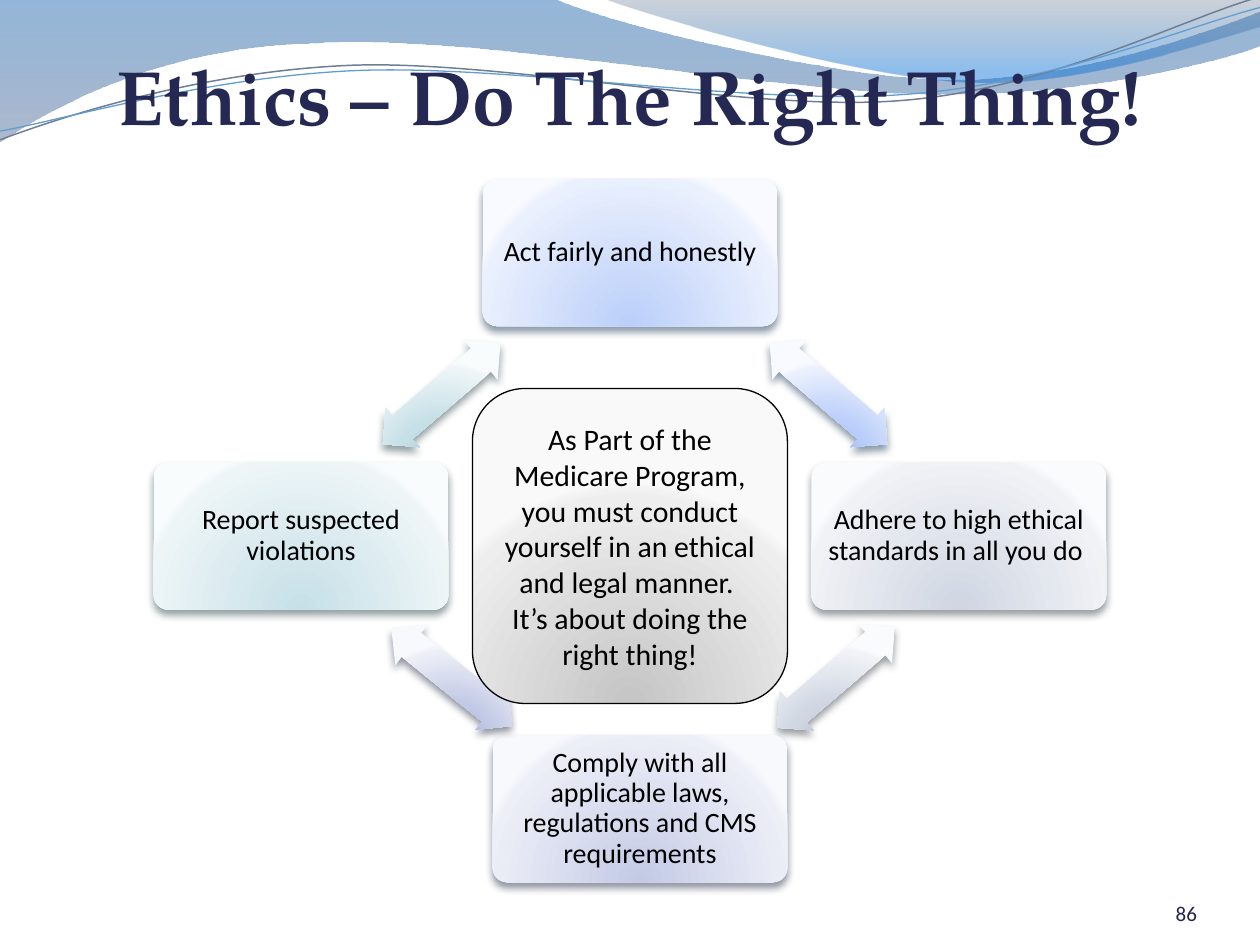
from lxml.etree import SubElement
from pptx import Presentation
from pptx.dml.color import RGBColor as RGB
from pptx.enum.shapes import MSO_SHAPE as Kind
from pptx.enum.text import MSO_ANCHOR as Anchor, MSO_AUTO_SIZE as Fit, PP_ALIGN as Align
from pptx.oxml.ns import qn
from pptx.util import Pt

THEME = {
    "head": "TeX Gyre Pagella", "body": "Calibri",
    "ink": "000000", "navy": "242852", "page": "22264E",
    "title": 44, "core": 17, "box": 16, "num": 12,
    # tones run from deep to pale, then the shadow colour
    "blue": ("8EAFEE", "BBCFFA", "EAF0FD", "F8FAFF", "0D2D4C"),
    "slate": ("AFB9CB", "D0D6E2", "F0F2F6", "FAFBFC", "2C323C"),
    "violet": ("99A5D0", "C3CAE6", "EDEFF7", "F8F9FD", "19233D"),
    "teal": ("9FC8D1", "C6E0E7", "EDF5F7", "F9FCFD", "1F393E"),
    "gray": ("C6C6C6", "EEEEEE", "F9F9F9"),
}

TITLE = "Ethics – Do The Right Thing!"
CORE = ["As Part of the Medicare Program, you must conduct yourself in an "
        "ethical and legal manner. ", "It’s about doing the right thing!"]
PAGE = "86"

# text, tone, box left and top, then centre and turn of the arrow that follows
STEPS = [
    ("Act fairly and honestly", "blue", (275.8, 102.2), (473.4, 225), 40.7),
    ("Adhere to high ethical standards in all you do ", "slate",
     (463.7, 264.2), (477.7, 387), 139.4),
    ("Comply with all applicable laws, regulations and CMS requirements",
     "violet", (281.5, 420), (258.1, 387), 218.9),
    ("Report suspected violations", "teal", (87.8, 264.2), (252.4, 225), 319.3),
]
BOX = (168.5, 84.2)
ARROW = (88.6, 29.5)

# start, then legs: two numbers make a line, six make a curve
BANDS = [
    ([(0, 0), (316.8, -0.7), (342.7, 12.2, 478.1, 45.4, 545.8, 45.4),
      (614.2, 45.4, 689.8, 18.7, 720, 6.5), (720.7, 25.9),
      (707.8, 31.7, 626.4, 54.7, 537.1, 54),
      (447.8, 54, 275, 20.2, 185, 24.5), (92.9, 25.9, 33.1, 59.8, -0.7, 81.4)],
     [(0, "125EAA", 45), (100, "697FA4", 55)]),
    ([(344.9, -0.7), (366.5, 7.9, 491, 44.6, 553.7, 46.8),
      (616.3, 49.7, 691.9, 23, 720, 15.1), (720, 0)],
     [(0, "596982", 30), (80, "0670DA", 45)]),
]
STRANDS = [
    ([(0, 79.9), (34.6, 67, 113.8, 41, 199.4, 37.4),
      (284.4, 33.8, 427, 64.1, 513.4, 57.6),
      (599.8, 51.1, 675.4, 10.8, 718.6, -1.4)], "707E95", 0.85),
    ([(0, 74.9), (33.8, 69.1, 118.1, 43.9, 203.8, 40.3),
      (290.2, 36.7, 429.8, 60.5, 516.2, 54),
      (601.9, 48.2, 677.5, 15.1, 720, 4.3)], "629DD1", 0.75),
]


def tint(host, color, alpha):
    node = SubElement(host, qn("a:srgbClr"), val=color)
    if alpha < 100:
        SubElement(node, qn("a:alpha"), val=str(alpha * 1000))


def shade(shape, stops, glow=True):
    """Fill with a glow from below, or else with a fade from top to bottom."""
    shape.fill.gradient()
    grad = shape._element.spPr.find(qn("a:gradFill"))
    for node in list(grad):
        grad.remove(node)
    grad.set("rotWithShape", "1")
    group = SubElement(grad, qn("a:gsLst"))
    for pos, color, alpha in stops:
        tint(SubElement(group, qn("a:gs"), pos=str(pos * 1000)), color, alpha)
    if glow:
        way = SubElement(grad, qn("a:path"), path="circle")
        SubElement(way, qn("a:fillToRect"), l="50000", t="130000",
                   r="50000", b="-30000")
    else:
        SubElement(grad, qn("a:lin"), ang="5400000", scaled="1")


def drop(shape, color):
    """Cast a soft shadow straight down."""
    fx = shape._element.spPr.find(qn("a:effectLst"))
    cast = SubElement(fx, qn("a:outerShdw"), blurRad=str(Pt(4.5)),
                      dist=str(Pt(3)), dir="5400000", rotWithShape="0")
    tint(cast, color, 48)


def write(shape, lines, size, font=THEME["body"], color=THEME["ink"], bold=False,
          align=Align.CENTER, anchor=Anchor.MIDDLE, inset=(7.2, 3.6, 7.2, 3.6), gap=1.0):
    frame = shape.text_frame
    frame.word_wrap = True
    frame.auto_size = Fit.NONE
    frame.vertical_anchor = anchor
    (frame.margin_left, frame.margin_top,
     frame.margin_right, frame.margin_bottom) = map(Pt, inset)
    frame.text = "\n".join(lines)
    for para in frame.paragraphs:
        para.alignment = align
        para.line_spacing = gap
        face = para.runs[0].font
        face.name, face.size, face.bold = font, Pt(size), bold
        face.color.rgb = RGB.from_string(color)


def bend(shape, legs):
    """Join each three points of a six-number leg into one curve."""
    lines = iter(list(shape._element.iter(qn("a:lnTo"))))
    for leg in legs:
        trio = [next(lines) for _ in range(len(leg) // 2)]
        if len(trio) == 1:
            continue
        host = trio[0].getparent()
        curve = SubElement(host, qn("a:cubicBezTo"))
        trio[0].addprevious(curve)
        for line in trio:
            curve.append(line[0])
            host.remove(line)


def sweep(shapes, legs, close):
    pts = [(Pt(x), Pt(y)) for leg in legs for x, y in zip(leg[::2], leg[1::2])]
    pen = shapes.build_freeform(*pts[0])
    pen.add_line_segments(pts[1:], close=close)
    shape = pen.convert_to_shape()
    bend(shape, legs[1:])
    shape.shadow.inherit = False
    return shape


def block(shapes, kind, left, top, size):
    shape = shapes.add_shape(kind, Pt(left), Pt(top), *map(Pt, size))
    shape.shadow.inherit = False
    shape.line.fill.background()
    return shape


def stroke(shape, color, width):
    shape.line.color.rgb = RGB.from_string(color)
    shape.line.width = Pt(width)


def main():
    deck = Presentation()
    deck.slide_width, deck.slide_height = Pt(720), Pt(540)
    slide = deck.slides.add_slide(deck.slide_layouts[5])
    shapes = slide.shapes

    for legs, stops in BANDS:
        band = sweep(shapes, legs, True)
        shade(band, stops, glow=False)
        band.line.fill.background()
    for legs, color, width in STRANDS:
        strand = sweep(shapes, legs, False)
        strand.fill.background()
        stroke(strand, color, width)

    title = shapes.title
    title.left, title.top, title.width, title.height = map(Pt, (0, 12, 720, 78))
    write(title, [TITLE], THEME["title"], font=THEME["head"], color=THEME["navy"],
          bold=True, anchor=Anchor.BOTTOM, inset=(0, 3.6, 0, 9.4))
    shapes._spTree.append(title._element)  # bring in front of the waves

    for text, tone, spot, (x, y), turn in STEPS:
        deep, mid, light, pale, dark = THEME[tone]
        box = block(shapes, Kind.ROUNDED_RECTANGLE, *spot, BOX)
        box.adjustments[0] = 0.1
        shade(box, [(0, mid, 100), (93, light, 100), (100, pale, 100)])
        drop(box, dark)
        write(box, [text], THEME["box"], inset=(5,) * 4, gap=0.9)

        arrow = block(shapes, Kind.LEFT_RIGHT_ARROW,
                      x - ARROW[0] / 2, y - ARROW[1] / 2, ARROW)
        arrow.adjustments[0] = 0.6
        arrow.adjustments[1] = 0.5
        arrow.rotation = turn
        shade(arrow, [(0, deep, 100), (43, mid, 100), (93, light, 100), (100, pale, 100)])
        drop(arrow, dark)

    page = shapes.add_textbox(Pt(624), Pt(500.4), Pt(60), Pt(28.8))
    write(page, [PAGE], THEME["num"], color=THEME["page"], align=Align.RIGHT,
          anchor=Anchor.BOTTOM, inset=(0,) * 4)

    core = block(shapes, Kind.ROUNDED_RECTANGLE, 270, 222, (180, 180))
    shade(core, [(p, c, 100) for p, c in zip((3, 93, 100), THEME["gray"])])
    stroke(core, THEME["ink"], 0.75)
    write(core, CORE, THEME["core"])

    deck.save("out.pptx")


if __name__ == "__main__":
    main()
